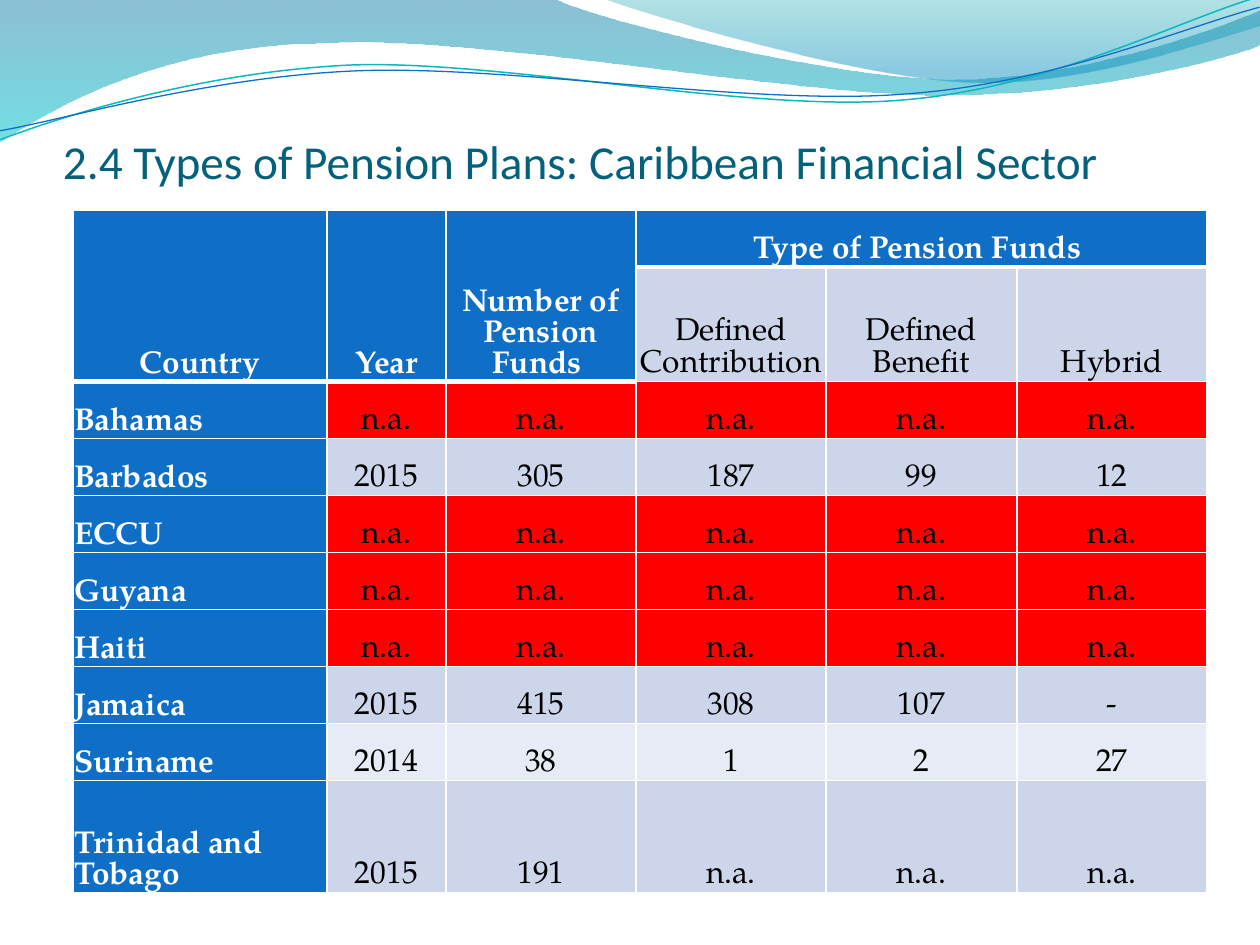
from lxml.etree import SubElement
from pptx import Presentation
from pptx.dml.color import RGBColor
from pptx.enum.text import MSO_ANCHOR as Anchor, PP_ALIGN as Align
from pptx.oxml.ns import qn
from pptx.util import Pt

SCALE = 914400 / 126
COLORS = {
    "white": "FFFFFF", "black": "000000", "title": "04617B",
    "blue": "0F6FC6", "teal": "0AB8BF", "red": "FF0000",
    "band": "CCD5EA", "light_band": "E7EBF5",
    "wave_top": "0074A1", "wave_bottom": "00C6CF",
    "crest_top": "00A1A9", "crest_bottom": "008BBF",
}
BODY_FONT = "TeX Gyre Pagella"
COLUMN_WIDTHS = [254, 119, 190, 190, 191, 190]
ROW_HEIGHTS = [57, 112] + [57] * 7 + [112]
NOT_AVAILABLE = "n.a."
HEADERS = [
    ["Country", "Year", "Number of Pension Funds ", "Type of Pension Funds ", "", ""],
    ["", "", "", "Defined Contribution", "Defined Benefit", "Hybrid"],
]
PLANS = [
    ["Bahamas"] + [NOT_AVAILABLE] * 5,
    ["Barbados", "2015", "305", "187", "99", "12"],
    ["ECCU"] + [NOT_AVAILABLE] * 5,
    ["Guyana"] + [NOT_AVAILABLE] * 5,
    ["Haiti"] + [NOT_AVAILABLE] * 5,
    ["Jamaica", "2015", "415", "308", "107", "-"],
    ["Suriname", "2014", "38", "1", "2", "27"],
    ["Trinidad and Tobago", "2015", "191"] + [NOT_AVAILABLE] * 3,
]

WAVE = [
    (0, 0), (554, -1), (600, 21, 837, 79, 955, 79),
    (1075, 79, 1207, 33, 1260, 11), (1261, 45),
    (1239, 55, 1096, 96, 940, 95), (784, 95, 481, 35, 324, 43),
    (163, 45, 58, 105, -1, 142), (0, 0),
]
CREST = [
    (604, -1), (641, 14, 859, 78, 969, 82),
    (1079, 87, 1211, 40, 1260, 26), (1260, 0), (604, -1),
]
TEAL_LINE = [
    (-2, 110), (59, 90, 200, 52, 350, 52),
    (498, 53, 745, 118, 897, 113), (1048, 109, 1184, 45, 1260, 27),
]
BLUE_LINE = [
    (-2, 101), (58, 94, 207, 57, 357, 58),
    (508, 59, 751, 112, 902, 107), (1052, 104, 1187, 53, 1262, 37),
]


def px(length):
    return round(length * SCALE)


def rgb(name):
    return RGBColor.from_string(COLORS[name])


def set_text(frame, text, size=18, font=BODY_FONT, color="black",
             bold=False, align=Align.LEFT):
    frame.word_wrap = True
    paragraph = frame.paragraphs[0]
    paragraph.alignment = align
    run = paragraph.add_run()
    run.text = text
    run.font.name = font
    run.font.size = Pt(size)
    run.font.bold = bold
    run.font.color.rgb = rgb(color)


def bend_segments(shape, segments):
    steps = iter(list(shape._element.spPr.iter(qn("a:lnTo"))))
    for segment in segments:
        step = next(steps)
        if len(segment) == 6:
            step.tag = qn("a:cubicBezTo")
            for extra in (next(steps), next(steps)):
                step.append(extra[0])
                extra.getparent().remove(extra)


def add_outline(slide, segments, close):
    start, *rest = segments
    points = [(px(x), px(y)) for segment in rest
              for x, y in zip(segment[0::2], segment[1::2])]
    builder = slide.shapes.build_freeform(px(start[0]), px(start[1]))
    builder.add_line_segments(points, close=close)
    shape = builder.convert_to_shape()
    shape.shadow.inherit = False
    bend_segments(shape, rest)
    return shape


def add_wave(slide, segments, stops):
    shape = add_outline(slide, segments, True)
    shape.line.fill.background()
    shape.fill.gradient()
    shape.fill.gradient_angle = 270
    for stop, (position, color, opacity) in zip(shape.fill.gradient_stops, stops):
        stop.position = position
        stop.color.rgb = rgb(color)
    colors = shape._element.spPr.iter(qn("a:srgbClr"))
    for element, (position, color, opacity) in zip(colors, stops):
        SubElement(element, qn("a:alpha"), val=str(opacity * 1000))


def add_wave_line(slide, segments, color, width):
    shape = add_outline(slide, segments, False)
    shape.rotation = 357.3
    shape.fill.background()
    shape.line.color.rgb = rgb(color)
    shape.line.width = Pt(width)


def add_title(slide, text):
    box = slide.shapes.add_textbox(px(63), px(97), px(1134), px(92))
    frame = box.text_frame
    frame.margin_left = frame.margin_right = frame.margin_bottom = 0
    frame.margin_top = px(6)
    frame.vertical_anchor = Anchor.BOTTOM
    set_text(frame, text, size=27, font="Calibri", color="title")


def border_width(row, column):
    return 3 if 0 <= row < (2 if column < 3 else 1) else 1


def add_borders(cell, row, column):
    widths = {"L": 1, "R": 1, "T": border_width(row - 1, column),
              "B": border_width(row, column)}
    properties = cell._tc.get_or_add_tcPr()
    for side, width in widths.items():
        line = SubElement(properties, qn(f"a:ln{side}"), w=str(Pt(width)))
        fill = SubElement(line, qn("a:solidFill"))
        SubElement(fill, qn("a:srgbClr"), val=COLORS["white"])


def cell_fill(row, column, values):
    if row == 0 or column == 0 or (row == 1 and column < 3):
        return "blue"
    if values[1] == NOT_AVAILABLE:
        return "red"
    return "light_band" if values[0] == "Suriname" else "band"


def format_cell(cell, row, column, values):
    add_borders(cell, row, column)
    fill = cell_fill(row, column, values)
    cell.fill.solid()
    cell.fill.fore_color.rgb = rgb(fill)
    cell.margin_left = cell.margin_right = cell.margin_top = px(1)
    cell.margin_bottom = 0
    cell.vertical_anchor = Anchor.BOTTOM
    if values[column]:
        heading = fill == "blue"
        set_text(cell.text_frame, values[column], bold=heading,
                 color="white" if heading else "black",
                 align=Align.LEFT if column == 0 and row > 1 else Align.CENTER)


def add_pension_table(slide):
    rows = HEADERS + PLANS
    frame = slide.shapes.add_table(
        len(rows), len(COLUMN_WIDTHS), px(73), px(210),
        px(sum(COLUMN_WIDTHS)), px(sum(ROW_HEIGHTS)))
    table = frame.table
    for column, width in zip(table.columns, COLUMN_WIDTHS):
        column.width = px(width)
    for row, height in zip(table.rows, ROW_HEIGHTS):
        row.height = px(height)
    for row, values in enumerate(rows):
        for column in range(len(values)):
            format_cell(table.cell(row, column), row, column, values)
    for column in range(3):
        table.cell(0, column).merge(table.cell(1, column))
    table.cell(0, 3).merge(table.cell(0, 5))


def main():
    presentation = Presentation()
    presentation.slide_width = px(1260)
    presentation.slide_height = px(945)
    slide = presentation.slides.add_slide(presentation.slide_layouts[6])
    add_wave(slide, WAVE, [(0, "wave_top", 45), (1, "wave_bottom", 55)])
    add_wave(slide, CREST, [(0, "crest_top", 30), (0.8, "crest_bottom", 45)])
    add_wave_line(slide, TEAL_LINE, "teal", 0.85)
    add_wave_line(slide, BLUE_LINE, "blue", 0.75)
    add_title(slide, "2.4 Types of Pension Plans: Caribbean Financial Sector")
    add_pension_table(slide)
    presentation.save("out.pptx")


if __name__ == "__main__":
    main()
